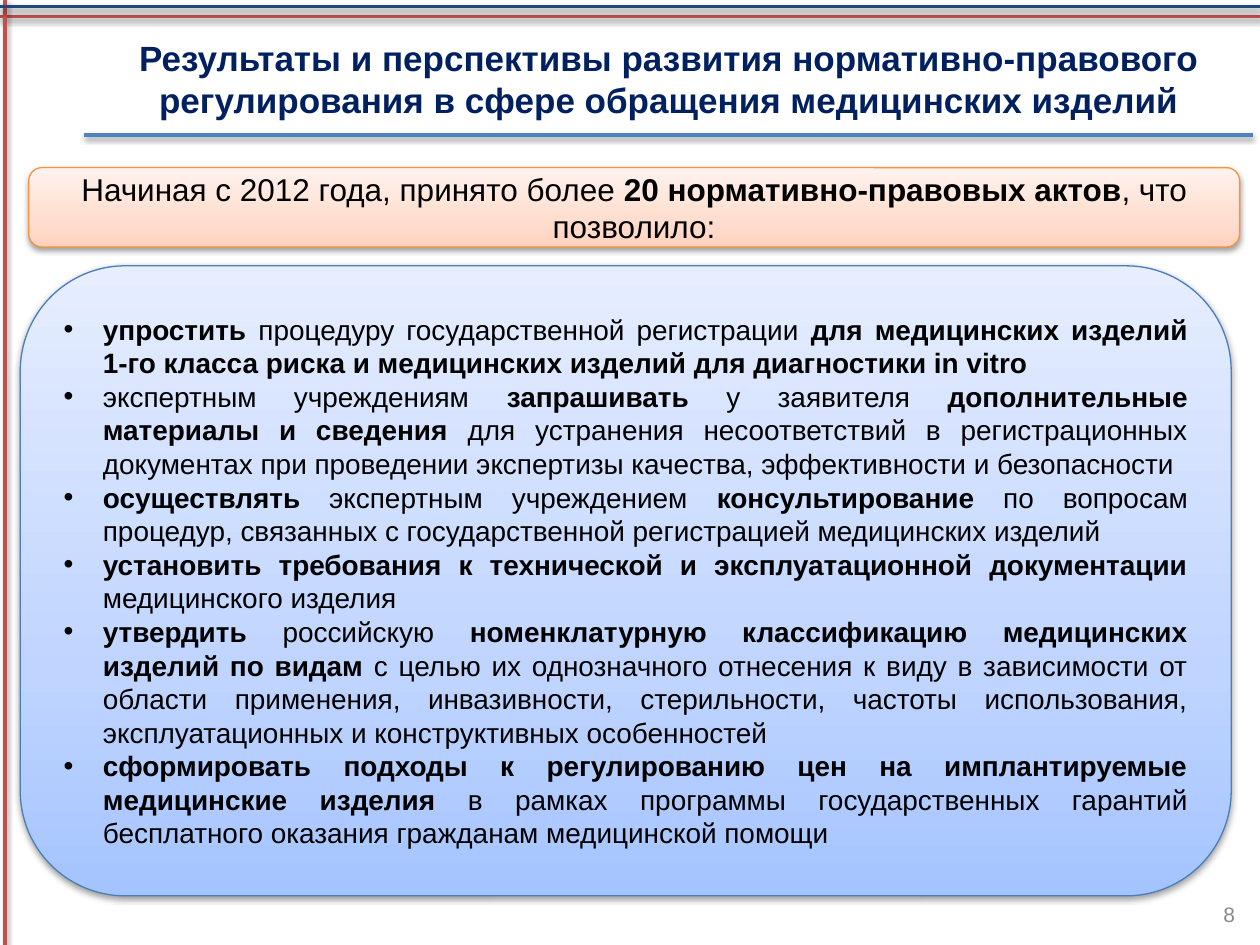
from lxml import etree
from pptx import Presentation
from pptx.dml.color import RGBColor
from pptx.enum.shapes import MSO_CONNECTOR, MSO_SHAPE
from pptx.enum.text import MSO_ANCHOR, MSO_AUTO_SIZE, PP_ALIGN
from pptx.oxml.ns import qn
from pptx.util import Cm, Pt

ROUNDED = MSO_SHAPE.ROUNDED_RECTANGLE
STRAIGHT = MSO_CONNECTOR.STRAIGHT
MIDDLE = MSO_ANCHOR.MIDDLE
NO_AUTOFIT = MSO_AUTO_SIZE.NONE
CENTER, RIGHT, JUSTIFY = PP_ALIGN.CENTER, PP_ALIGN.RIGHT, PP_ALIGN.JUSTIFY

TITLE = ("Результаты и перспективы развития нормативно-правового "
         "регулирования в сфере обращения медицинских изделий")
PAGE_NUMBER = "8"

# Each run is (text, bold)
SUMMARY = [
    ("Начиная с 2012 года, принято более ", False),
    ("20 нормативно-правовых актов", True),
    (", что позволило:", False),
]
RESULTS = [
    [("упростить ", True),
     ("процедуру государственной регистрации ", False),
     ("для медицинских изделий 1-го класса риска и медицинских изделий "
      "для диагностики in vitro", True)],
    [("экспертным учреждениям ", False),
     ("запрашивать", True),
     (" у заявителя ", False),
     ("дополнительные материалы и сведения ", True),
     ("для устранения несоответствий в регистрационных документах при проведении "
      "экспертизы качества, эффективности и безопасности ", False)],
    [("осуществлять", True),
     (" экспертным учреждением ", False),
     ("консультирование", True),
     (" по вопросам процедур, связанных с государственной регистрацией "
      "медицинских изделий", False)],
    [("установить требования к технической и эксплуатационной документации ", True),
     ("медицинского изделия", False)],
    [("утвердить", True),
     (" российскую ", False),
     ("номенклатурную классификацию медицинских изделий по видам ", True),
     ("с целью их однозначного отнесения к виду в зависимости от области применения, "
      "инвазивности, стерильности, частоты использования, эксплуатационных и "
      "конструктивных особенностей", False)],
    [("сформировать подходы к регулированию цен на имплантируемые медицинские изделия ", True),
     ("в рамках программы государственных гарантий бесплатного оказания гражданам "
      "медицинской помощи", False)],
]

THEME = {
    "font": "Arial",
    "title": (20, "002060"),
    "summary": (18, "000000"),
    "results": (16, "000000"),
    "number": (12, "898989"),
    "red": "C0504D",
    "navy": "1F497D",
    "blue": "4F81BD",
    "orange_panel": ("F69240", ["FFD2BD", "FFDED0", "FFF2ED"]),
    "blue_panel": ("4B7EBC", ["A4C4FF", "BFD4FF", "E6EEFF"]),
    "stops": [0, 35, 100],
}

WIDTH, HEIGHT = 25.4, 19.05
RULES = [
    ((WIDTH, 0.33), (0, 0.33), "red"),
    ((0.1, 0), (0.1, HEIGHT), "red"),
    ((0, 0.13), (WIDTH, 0.13), "navy"),
    ((1.7, 2.72), (25.25, 2.72), "blue"),
]
TITLE_BOX = (1.57, 0.41, 23.83, 2.34)
SUMMARY_BOX = (0.58, 3.38, 24.41, 1.6)
RESULTS_BOX = (0.41, 5.36, 24.41, 12.7)
NUMBER_BOX = (19.23, 17.91, 5.92, 1.02)
CORNER_INSET = 0.62
HANGING = Cm(0.79)


def lengths(box):
    return [Cm(value) for value in box]


def add_shadow(shape):
    effects = etree.SubElement(shape._element.spPr, qn("a:effectLst"))
    shadow = etree.SubElement(effects, qn("a:outerShdw"), blurRad=str(Pt(3.1)),
                              dist=str(Pt(1.6)), dir="5400000", rotWithShape="0")
    color = etree.SubElement(shadow, qn("a:srgbClr"), val="000000")
    etree.SubElement(color, qn("a:alpha"), val="38000")


def add_rule(slide, start, end, color):
    rule = slide.shapes.add_connector(STRAIGHT, *lengths(start + end))
    rule.line.color.rgb = RGBColor.from_string(THEME[color])
    rule.line.width = Pt(2)
    add_shadow(rule)


def add_panel(slide, box, style):
    line_color, colors = THEME[style]
    panel = slide.shapes.add_shape(ROUNDED, *lengths(box))
    panel.fill.gradient()
    panel.fill.gradient_angle = 90
    stops = panel._element.spPr.find(qn("a:gradFill")).find(qn("a:gsLst"))
    for stop in list(stops):
        stops.remove(stop)
    for position, color in zip(THEME["stops"], colors):
        stop = etree.SubElement(stops, qn("a:gs"), pos=str(position * 1000))
        etree.SubElement(stop, qn("a:srgbClr"), val=color)
    panel.line.color.rgb = RGBColor.from_string(line_color)
    panel.line.width = Pt(0.75)
    add_shadow(panel)
    return panel


def place(shape, box):
    shape.left, shape.top, shape.width, shape.height = lengths(box)


def add_bullet(paragraph):
    properties = paragraph._p.get_or_add_pPr()
    properties.set("marL", str(HANGING))
    properties.set("indent", str(-HANGING))
    etree.SubElement(properties, qn("a:buFont"), typeface=THEME["font"])
    etree.SubElement(properties, qn("a:buChar"), char="•")


def write(shape, paragraphs, style, alignment, bulleted=False):
    frame = shape.text_frame
    frame.word_wrap = True
    frame.auto_size = NO_AUTOFIT
    frame.vertical_anchor = MIDDLE
    size, color = THEME[style]
    for index, runs in enumerate(paragraphs):
        paragraph = frame.paragraphs[0] if index == 0 else frame.add_paragraph()
        if bulleted:
            add_bullet(paragraph)
        paragraph.alignment = alignment
        paragraph.space_before = Pt(0)
        paragraph.font.name = THEME["font"]
        paragraph.font.size = Pt(size)
        paragraph.font.color.rgb = RGBColor.from_string(color)
        for text, bold in runs:
            run = paragraph.add_run()
            run.text = text
            run.font.bold = bold


def main():
    presentation = Presentation()
    presentation.slide_width, presentation.slide_height = Cm(WIDTH), Cm(HEIGHT)
    slide = presentation.slides.add_slide(presentation.slide_layouts[1])
    title, body = slide.placeholders

    for start, end, color in RULES:
        add_rule(slide, start, end, color)

    place(title, TITLE_BOX)
    write(title, [[(TITLE, True)]], "title", CENTER)

    summary = add_panel(slide, SUMMARY_BOX, "orange_panel")
    write(summary, [SUMMARY], "summary", CENTER)

    panel = add_panel(slide, RESULTS_BOX, "blue_panel")
    left, top, width, height = RESULTS_BOX
    place(body, (left + CORNER_INSET, top + CORNER_INSET,
                 width - 2 * CORNER_INSET, height - 2 * CORNER_INSET))
    write(body, RESULTS, "results", JUSTIFY, bulleted=True)
    panel._element.addnext(body._element)

    number = slide.shapes.add_textbox(*lengths(NUMBER_BOX))
    write(number, [[(PAGE_NUMBER, False)]], "number", RIGHT)

    presentation.save("out.pptx")


if __name__ == "__main__":
    main()
